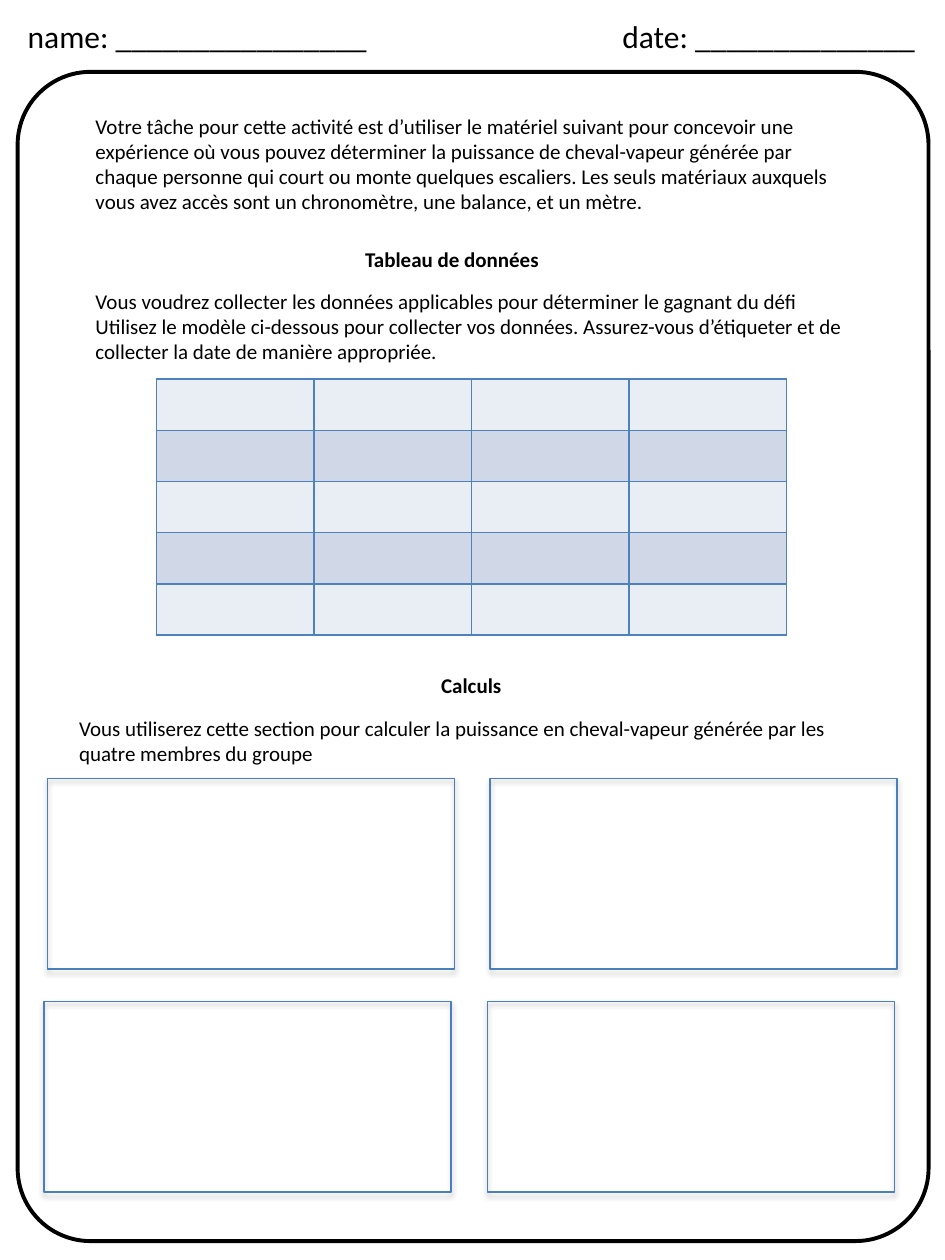
from lxml import etree
from pptx import Presentation
from pptx.dml.color import RGBColor
from pptx.enum import shapes, text
from pptx.oxml import parse_xml
from pptx.oxml.ns import nsdecls, qn
from pptx.util import Inches, Pt

COLORS = {
    "ink": "000000",
    "box_line": "4B7EBC",
    "grid": "4F81BD",
    "band_light": "E9EDF4",
    "band_dark": "D0D8E8",
}
RGB = {name: RGBColor.from_string(value) for name, value in COLORS.items()}


def add_text(left, top, width, height, paragraphs, bold=False, align=text.PP_ALIGN.LEFT, gap=0):
    """Add a 12 pt text box; gap is the space in points between paragraphs."""
    tf = s.shapes.add_textbox(Inches(left), Inches(top), Inches(width), Inches(height)).text_frame
    tf.word_wrap = True
    for i, line in enumerate(paragraphs):
        p = tf.add_paragraph() if i else tf.paragraphs[0]
        p.text = line
        p.alignment = align
        if i:
            p.space_before = Pt(gap)
        p.font.name, p.font.size, p.font.bold = "Calibri", Pt(12), bold
        p.font.color.rgb = RGB["ink"]


def add_outline(kind, left, top, width, height, color, weight):
    sp = s.shapes.add_shape(kind, Inches(left), Inches(top), Inches(width), Inches(height))
    sp.shadow.inherit = False
    sp.fill.background()
    sp.line.color.rgb = RGB[color]
    sp.line.width = Pt(weight)
    return sp


prs = Presentation()
prs.slide_width, prs.slide_height = Inches(7.5), Inches(10)
s = prs.slides.add_slide(prs.slide_layouts[5])

# Name and date line, split by a tab stop
title = s.shapes.title
title.left, title.top, title.width, title.height = Inches(0), Inches(-0.02), Inches(7.5), Inches(0.61)
tf = title.text_frame
tf.margin_left, tf.margin_right = Inches(0.22), Inches(0.1)
tf.vertical_anchor = text.MSO_ANCHOR.MIDDLE
p = tf.paragraphs[0]
p.text = "name: ________________\tdate: ______________"
p.alignment = text.PP_ALIGN.LEFT
tabs = etree.SubElement(p._p.get_or_add_pPr(), qn("a:tabLst"))
etree.SubElement(tabs, qn("a:tab"), pos=str(Inches(4.72)), algn="l")
p.font.name, p.font.size = "Calibri", Pt(18)
p.font.color.rgb = RGB["ink"]

# Page frame
frame = add_outline(shapes.MSO_SHAPE.ROUNDED_RECTANGLE, 0.14, 0.57, 7.23, 9.28, "ink", 2.25)
frame.adjustments[0] = 0.08

# Instructions and headings
add_text(0.66, 0.85, 6.17, 2.12, [
    "Votre tâche pour cette activité est d’utiliser le matériel suivant pour concevoir une "
    "expérience où vous pouvez déterminer la puissance de cheval-vapeur générée par chaque "
    "personne qui court ou monte quelques escaliers. Les seuls matériaux auxquels vous avez "
    "accès sont un chronomètre, une balance, et un mètre.",
    "Vous voudrez collecter les données applicables pour déterminer le gagnant du défi "
    "Utilisez le modèle ci-dessous pour collecter vos données. Assurez-vous d’étiqueter et de "
    "collecter la date de manière appropriée.",
], gap=42.5)
add_text(2.8, 1.91, 1.92, 0.3, ["Tableau de données"], bold=True)
add_text(3.13, 5.29, 1.22, 0.3, ["Calculs"], bold=True, align=text.PP_ALIGN.CENTER)
add_text(0.53, 5.63, 6.43, 0.5, [
    "Vous utiliserez cette section pour calculer la puissance en cheval-vapeur générée par les "
    "quatre membres du groupe",
])

# Data table
rows, cols = 5, 4
table = s.shapes.add_table(rows, cols, Inches(1.24), Inches(3.01), Inches(5), Inches(2.03)).table
table.first_row = table.horz_banding = False
for r in range(rows):
    for c in range(cols):
        cell = table.cell(r, c)
        tcPr = cell._tc.get_or_add_tcPr()
        for side in ("lnL", "lnR", "lnT", "lnB"):
            ln = etree.SubElement(tcPr, qn(f"a:{side}"), w=str(Pt(1)))
            fill = etree.SubElement(ln, qn("a:solidFill"))
            etree.SubElement(fill, qn("a:srgbClr"), val=COLORS["grid"])
        cell.fill.solid()
        cell.fill.fore_color.rgb = RGB["band_dark" if r % 2 else "band_light"]

# One calculation box for each group member
for top, lefts in ((6.18, (0.38, 3.89)), (7.95, (0.35, 3.87))):
    for left in lefts:
        box = add_outline(shapes.MSO_SHAPE.RECTANGLE, left, top, 3.23, 1.51, "box_line", 0.75)
        box._element.spPr.find(qn("a:effectLst")).append(parse_xml(
            f'<a:outerShdw {nsdecls("a")} blurRad="{Pt(3.1)}" dist="{Pt(1.8)}" dir="5400000" '
            f'rotWithShape="0"><a:srgbClr val="{COLORS["ink"]}"><a:alpha val="35000"/>'
            '</a:srgbClr></a:outerShdw>'))

prs.save("out.pptx")
